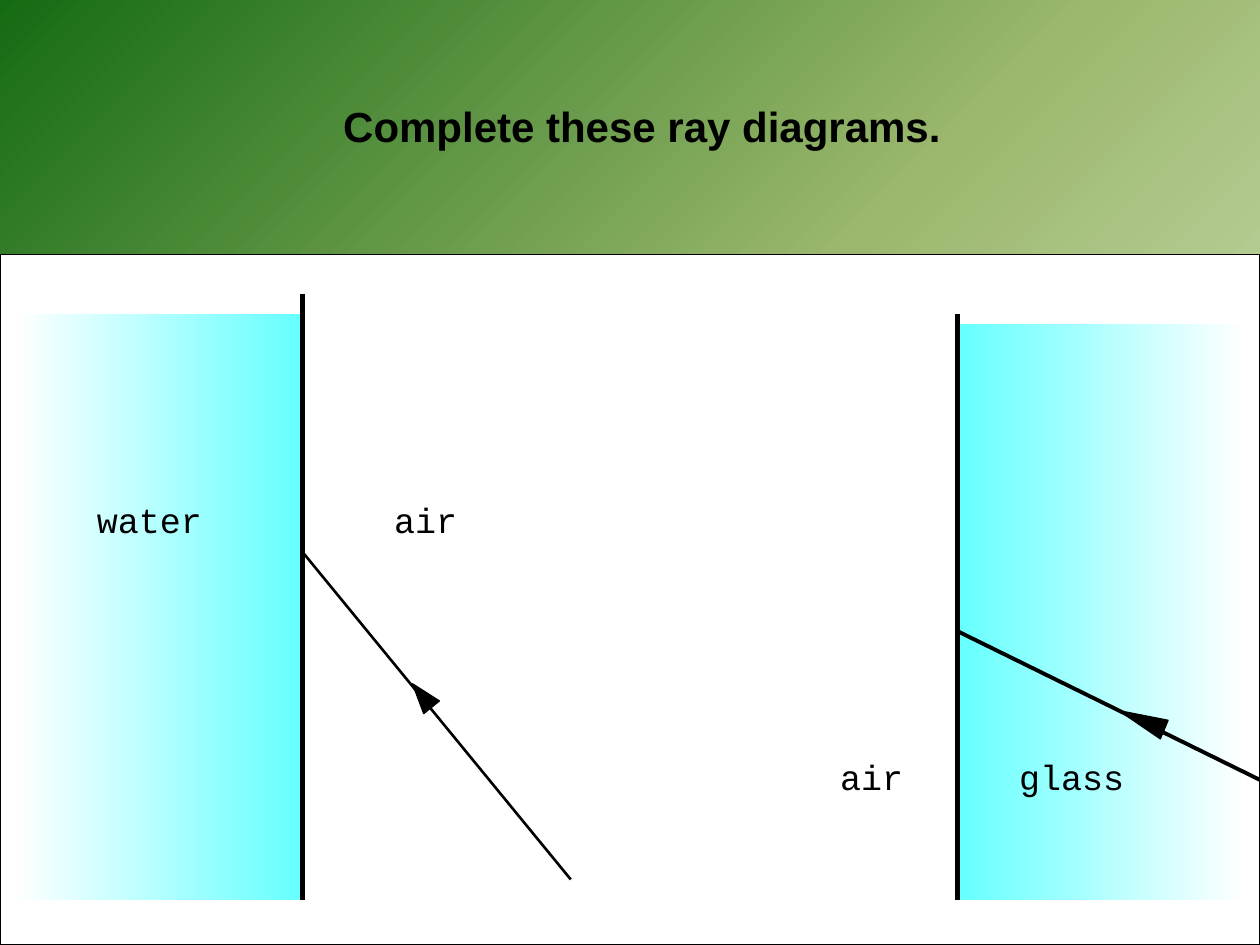
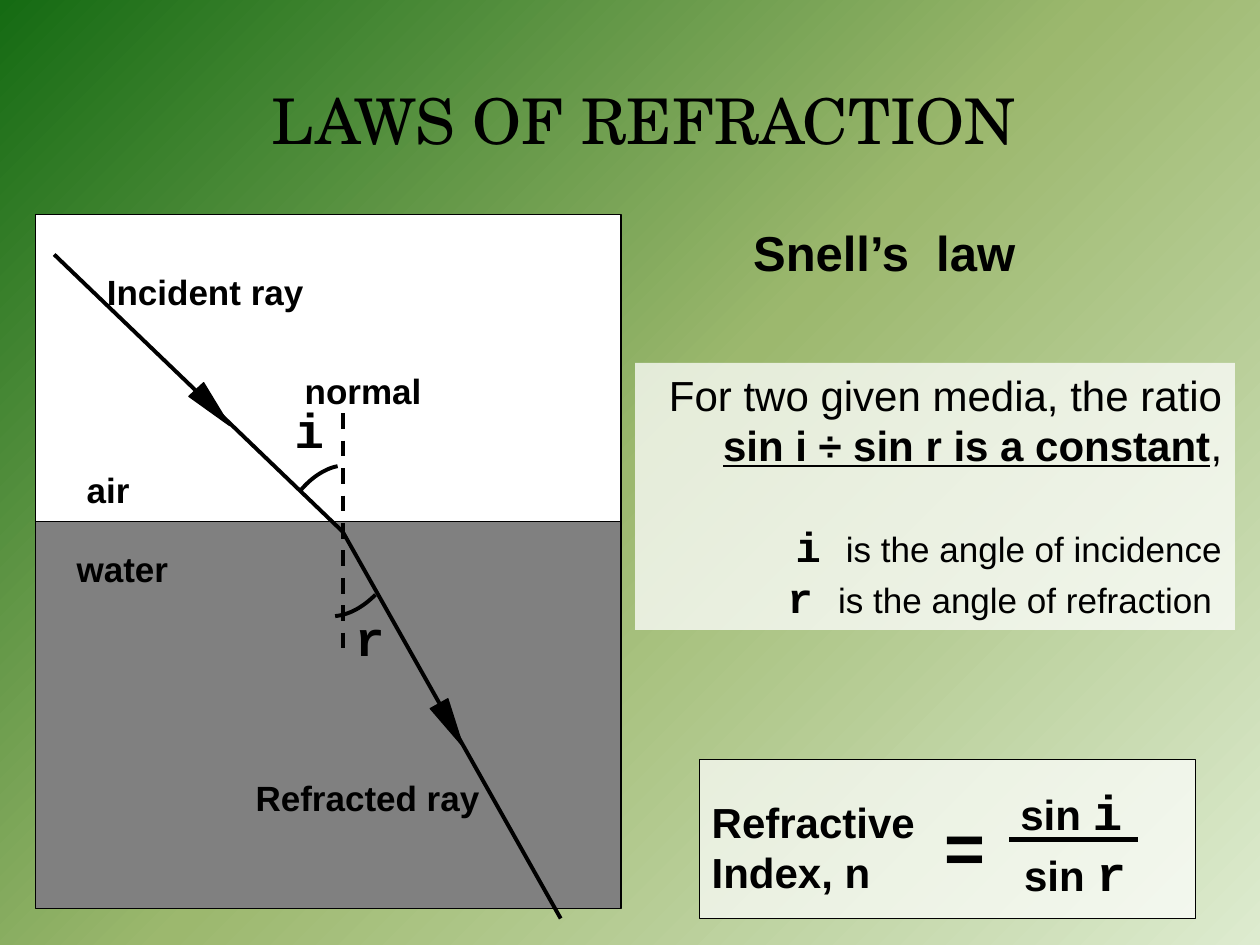
from dataclasses import dataclass
from typing import NamedTuple

from lxml.etree import SubElement
from pptx import Presentation
from pptx.dml.color import RGBColor
from pptx.enum.dml import MSO_LINE_DASH_STYLE as Dash
from pptx.enum.shapes import MSO_CONNECTOR as Conn, MSO_SHAPE as Shape
from pptx.enum.text import MSO_ANCHOR as Anchor, MSO_AUTO_SIZE as AutoSize, PP_ALIGN as Align
from pptx.oxml import parse_xml
from pptx.oxml.ns import nsdecls, qn
from pptx.util import Inches, Pt


class TextStyle(NamedTuple):
    font: str
    size: float
    bold: bool = False
    underline: bool = False


@dataclass(frozen=True)
class Theme:
    ink: str = "000000"
    paper: str = "FFFFFF"
    aqua: str = "66FFFF"
    gray: str = "808080"
    backdrop: tuple = ((0, "DDEBCF"), (50, "9CB86E"), (100, "156B13"))
    thin: float = 0.75
    ray: float = 1.5
    thick_ray: float = 2.25
    boundary: float = 3
    question: TextStyle = TextStyle("Arial", 24, True)
    heading: TextStyle = TextStyle("TeX Gyre Schola", 36)
    subheading: TextStyle = TextStyle("Arial", 28, True)
    medium: TextStyle = TextStyle("Courier New", 20)
    label: TextStyle = TextStyle("Arial", 20, True)
    angle: TextStyle = TextStyle("Courier New", 28, True)
    law: TextStyle = TextStyle("Arial", 24)
    constant: TextStyle = TextStyle("Arial", 24, True, True)
    symbol: TextStyle = TextStyle("Courier New", 24, True)
    meaning: TextStyle = TextStyle("Arial", 20)
    formula: TextStyle = TextStyle("Arial", 24, True)
    equals: TextStyle = TextStyle("Arial", 40, True)


T = Theme()


class Box(NamedTuple):
    x: float
    y: float
    w: float
    h: float


class Label(NamedTuple):
    box: Box
    runs: tuple


class Line(NamedTuple):
    start: tuple
    end: tuple
    width: float
    dashed: bool = False


class Arrow(NamedTuple):
    box: Box
    turn: float


class Panel(NamedTuple):
    box: Box
    fill: str
    opacity: int = 100


def rgb(code: str) -> RGBColor:
    return RGBColor.from_string(code)


def inches(box: Box) -> list:
    return [Inches(v) for v in box]


def place(shape, box: Box) -> None:
    shape.left, shape.top, shape.width, shape.height = inches(box)


def style_run(r, style: TextStyle) -> None:
    f = r.font
    f.name, f.size, f.bold, f.underline = style.font, Pt(style.size), style.bold, style.underline
    f.color.rgb = rgb(T.ink)


def write_runs(p, runs) -> None:
    for text, style in runs:
        r = p.add_run()
        r.text = text
        style_run(r, style)


def set_fill(shape, color: str, opacity: int = 100) -> None:
    shape.fill.solid()
    shape.fill.fore_color.rgb = rgb(color)
    if opacity < 100:
        clr = shape.element.spPr.find(qn("a:solidFill")).find(qn("a:srgbClr"))
        SubElement(clr, qn("a:alpha")).set("val", str(opacity * 1000))


def set_line(shape, width: float) -> None:
    shape.line.color.rgb = rgb(T.ink)
    shape.line.width = Pt(width)


def add_panel(s, panel: Panel) -> None:
    sp = s.shapes.add_shape(Shape.RECTANGLE, *inches(panel.box))
    sp.shadow.inherit = False
    set_fill(sp, panel.fill, panel.opacity)
    set_line(sp, T.thin)


def add_medium(s, box: Box, left: str, right: str) -> None:
    sp = s.shapes.add_shape(Shape.RECTANGLE, *inches(box))
    sp.shadow.inherit = False
    sp.fill.gradient()
    sp.fill.gradient_angle = 0
    for stop, color in zip(sp.fill.gradient_stops, (left, right)):
        stop.color.rgb = rgb(color)
    sp.line.fill.background()


def add_line(s, line: Line) -> None:
    ends = [Inches(v) for v in line.start + line.end]
    cxn = s.shapes.add_connector(Conn.STRAIGHT, *ends)
    set_line(cxn, line.width)
    if line.dashed:
        cxn.line.dash_style = Dash.DASH
    SubElement(cxn.element.spPr, qn("a:effectLst"))


def add_arrow(s, arrow: Arrow) -> None:
    sp = s.shapes.add_shape(Shape.ISOSCELES_TRIANGLE, *inches(arrow.box))
    sp.shadow.inherit = False
    sp.rotation = arrow.turn
    set_fill(sp, T.ink)
    set_line(sp, T.thin)


def add_curve(s, points: tuple, steps: int = 16) -> None:
    def at(t: float) -> tuple:
        weights = ((1 - t) ** 3, 3 * t * (1 - t) ** 2, 3 * t * t * (1 - t), t ** 3)
        return tuple(Inches(sum(w * pt[i] for w, pt in zip(weights, points))) for i in (0, 1))

    path = [at(n / steps) for n in range(steps + 1)]
    builder = s.shapes.build_freeform(*path[0])
    builder.add_line_segments(path[1:], close=False)
    sp = builder.convert_to_shape()
    sp.shadow.inherit = False
    sp.fill.background()
    set_line(sp, T.thick_ray)


def add_label(s, label: Label) -> None:
    tf = s.shapes.add_textbox(*inches(label.box)).text_frame
    tf.word_wrap = True
    write_runs(tf.paragraphs[0], label.runs)


def set_title(s, text: str, box: Box, style: TextStyle) -> None:
    title = s.shapes.title
    place(title, box)
    tf = title.text_frame
    tf.text = text
    tf.auto_size, tf.vertical_anchor = AutoSize.NONE, Anchor.TOP
    p = tf.paragraphs[0]
    p.alignment = Align.CENTER
    style_run(p.runs[0], style)


def set_law(s, box: Box, paragraphs: tuple) -> None:
    body = s.placeholders[1]
    place(body, box)
    set_fill(body, T.paper, 75)
    tf = body.text_frame
    tf.auto_size = AutoSize.NONE
    for i, (gap, runs) in enumerate(paragraphs):
        p = tf.add_paragraph() if i else tf.paragraphs[0]
        write_runs(p, runs)
        p.alignment, p.space_before = Align.RIGHT, Pt(gap)
        pPr = p._p.get_or_add_pPr()
        pPr.set("marL", "0")
        pPr.set("indent", "0")
        SubElement(pPr, qn("a:buNone"))


def set_backdrop(prs) -> None:
    master = prs.slide_master
    master.background.fill.solid()
    bg = next(master.element.iter(qn("p:bgPr")))
    stops = "".join(
        f'<a:gs pos="{pos * 1000}"><a:srgbClr val="{color}"/></a:gs>' for pos, color in T.backdrop
    )
    bg.replace(bg[0], parse_xml(
        f'<a:gradFill {nsdecls("a")} rotWithShape="1"><a:gsLst>{stops}</a:gsLst>'
        '<a:path path="circle"><a:fillToRect l="100000" t="100000"/></a:path></a:gradFill>'
    ))


def build_exercise(prs) -> None:
    s = prs.slides.add_slide(prs.slide_layouts[5])
    set_title(s, "Complete these ray diagrams.", Box(1.61, 0.75, 6.97, 0.5), T.question)
    add_panel(s, Panel(Box(0, 2.02, 10, 5.48), T.paper))
    add_medium(s, Box(7.6, 2.57, 2.28, 4.57), T.aqua, T.paper)
    add_medium(s, Box(0.12, 2.49, 2.28, 4.65), T.paper, T.aqua)
    for line in (
        Line((2.4, 2.33), (2.4, 7.14), T.boundary),
        Line((7.6, 7.14), (7.6, 2.49), T.boundary),
        Line((4.53, 6.98), (2.4, 4.38), T.ray),
        Line((10, 6.19), (7.6, 5.01), T.thick_ray),
    ):
        add_line(s, line)
    add_arrow(s, Arrow(Box(3.27, 5.4, 0.16, 0.24), 321))
    add_arrow(s, Arrow(Box(8.98, 5.52, 0.16, 0.39), 292.7))
    for text, x, y, w in (
        ("air", 3.03, 3.91, 2.52),
        ("water", 0.67, 3.91, 2.52),
        ("glass", 7.99, 5.95, 1.26),
        ("air", 6.57, 5.95, 1.1),
    ):
        add_label(s, Label(Box(x, y, w, 0.43), ((text, T.medium),)))


def build_laws(prs) -> None:
    s = prs.slides.add_slide(prs.slide_layouts[1])
    set_title(s, "LAWS OF REFRACTION", Box(1.86, 0.6, 6.5, 0.7), T.heading)
    set_law(s, Box(5.04, 2.88, 4.76, 2.12), (
        (0, (("For two given media, the ratio ", T.law),
             ("sin i ÷ sin r is a constant", T.constant), (",", T.law))),
        (29, (("i ", T.symbol), ("is the angle of incidence", T.meaning))),
        (0, (("r ", T.symbol), ("is the angle of refraction ", T.meaning))),
    ))
    for panel in (
        Panel(Box(5.55, 6.03, 3.94, 1.26), T.paper, 70),
        Panel(Box(0.28, 1.7, 4.65, 5.36), T.paper),
        Panel(Box(0.28, 4.14, 4.65, 3.07), T.gray),
    ):
        add_panel(s, panel)
    hit = (2.72, 4.22)
    for line in (
        Line((2.72, 3.28), (2.72, 5.17), T.thick_ray, dashed=True),
        Line((0.43, 2.02), hit, T.thick_ray),
        Line(hit, (4.45, 7.29), T.thick_ray),
        Line((8.01, 6.66), (9.03, 6.66), T.boundary),
    ):
        add_line(s, line)
    add_arrow(s, Arrow(Box(1.61, 3.04, 0.16, 0.39), 137.2))
    add_arrow(s, Arrow(Box(3.5, 5.56, 0.16, 0.39), 150.8))
    add_curve(s, ((2.38, 3.9), (2.47, 3.79), (2.58, 3.72), (2.68, 3.7)))
    add_curve(s, ((2.98, 4.72), (2.88, 4.82), (2.77, 4.88), (2.66, 4.89)))
    for text, x, y, w, h, style in (
        ("i", 2.24, 3.12, 0.79, 0.57, T.angle),
        ("r", 2.72, 4.77, 0.79, 0.57, T.angle),
        ("air", 0.59, 3.67, 1.1, 0.43, T.label),
        ("water", 0.51, 4.3, 1.1, 0.43, T.label),
        ("Incident ray", 0.75, 2.1, 2.44, 0.43, T.label),
        ("Refracted ray", 1.93, 6.11, 2.44, 0.43, T.label),
        ("normal", 2.32, 2.88, 2.44, 0.43, T.label),
        ("Refractive Index, n", 5.55, 6.27, 2.05, 0.9, T.formula),
        ("=", 7.4, 6.33, 1.02, 0.77, T.equals),
        ("Snell’s  law", 5.88, 1.72, 2.9, 0.56, T.subheading),
    ):
        add_label(s, Label(Box(x, y, w, h), ((text, style),)))
    for letter, x, y in (("i", 8, 6.15), ("r", 8.03, 6.64)):
        add_label(s, Label(Box(x, y, 1.02, 0.57), (("sin ", T.formula), (letter, T.angle))))


def main() -> None:
    prs = Presentation()
    prs.slide_width, prs.slide_height = Inches(10), Inches(7.5)
    set_backdrop(prs)
    build_exercise(prs)
    build_laws(prs)
    prs.save("out.pptx")


if __name__ == "__main__":
    main()
